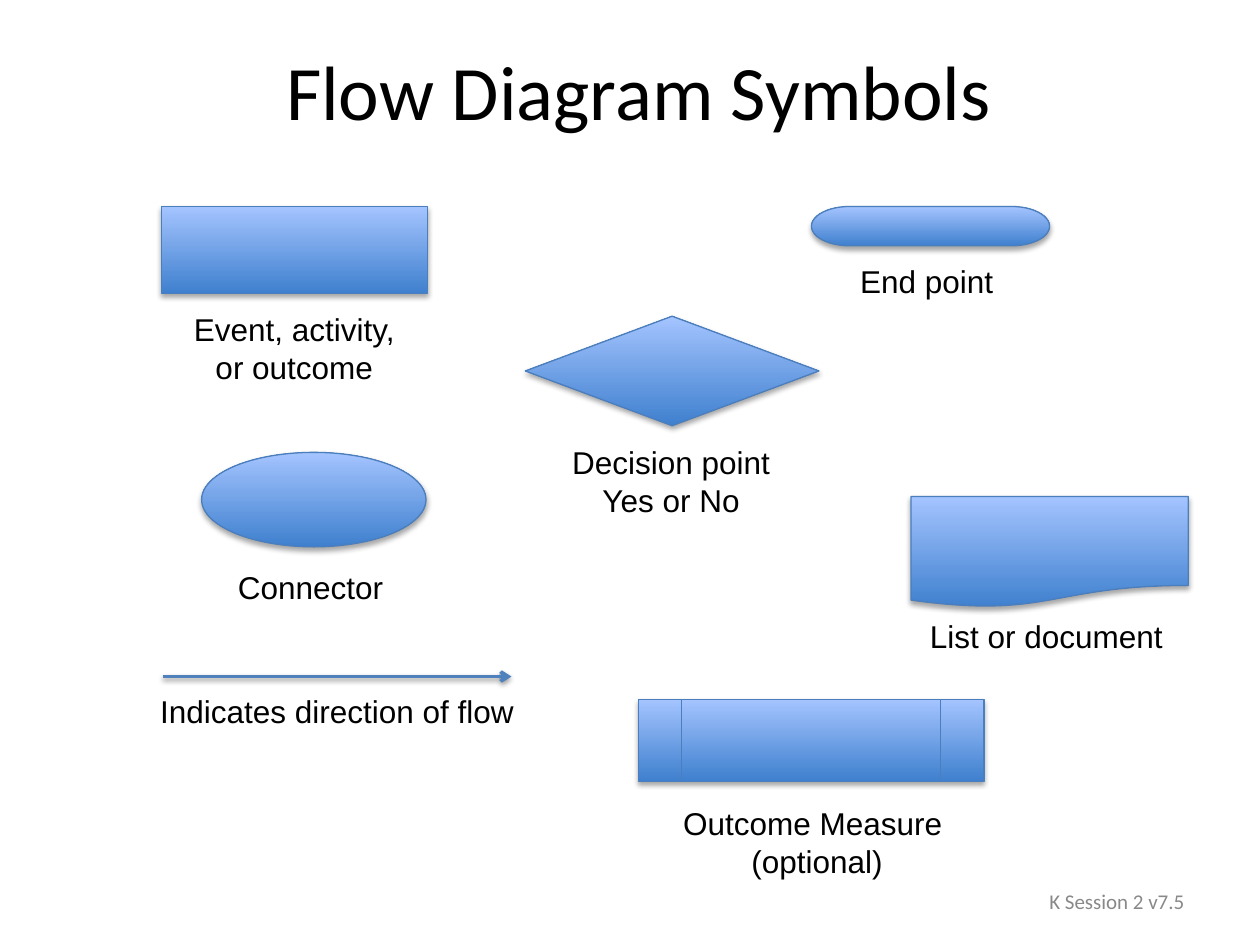
from lxml.etree import SubElement
from pptx import Presentation
from pptx.dml.color import RGBColor
from pptx.enum.shapes import MSO_CONNECTOR, MSO_SHAPE as Shape
from pptx.enum.text import MSO_ANCHOR as Anchor, MSO_AUTO_SIZE as AutoSize, PP_ALIGN as Align
from pptx.oxml.ns import qn
from pptx.util import Pt

COLORS = {
    "text": "000000",
    "footer": "898989",
    "fill_bottom": "3F80CE",
    "fill_top": "A4C4FF",
    "outline": "4B7EBC",
    "arrow": "4F81BD",
    "shadow": "000000",
}

SYMBOLS = [
    (Shape.RECTANGLE, (92.2, 118, 152, 49.7),
     "Event, activity,\nor outcome", (103, 173.5, 130.3)),
    (Shape.FLOWCHART_DECISION, (300.2, 180.7, 167.8, 62.6),
     "Decision point\nYes or No", (319, 249.8, 128.9)),
    (Shape.FLOWCHART_TERMINATOR, (463.7, 118, 136.1, 22.5),
     "End point", (483.8, 146.2, 91.4)),
    (Shape.FLOWCHART_CONNECTOR, (115.2, 258.5, 128.2, 54),
     "Connector", (128.2, 321.1, 98.6)),
    (Shape.FLOWCHART_DOCUMENT, (520.6, 283.7, 158.4, 63.4),
     "List or document", (523.4, 349.2, 149)),
    (Shape.FLOWCHART_PREDEFINED_PROCESS, (365, 399.6, 197.3, 46.8),
     "Outcome Measure \n(optional)", (382.3, 455.8, 169.2)),
]


def color(name):
    return RGBColor.from_string(COLORS[name])


def points(values):
    return [Pt(v) for v in values]


def write(tf, text, font, size, color_name, align):
    tf.text = text
    for p in tf.paragraphs:
        p.alignment = align
        for r in p.runs:
            r.font.name = font
            r.font.size = Pt(size)
            r.font.color.rgb = color(color_name)


def add_shadow(sp, opacity, distance):
    effects = SubElement(sp._element.spPr, qn("a:effectLst"))
    shadow = SubElement(effects, qn("a:outerShdw"), blurRad=str(Pt(3.1)),
                        dist=str(Pt(distance)), dir="5400000", rotWithShape="0")
    shade = SubElement(shadow, qn("a:srgbClr"), val=COLORS["shadow"])
    SubElement(shade, qn("a:alpha"), val=str(opacity * 1000))


def add_label(shapes, text, left, top, width):
    height = 7 + 22 * len(text.split("\n"))
    tf = shapes.add_textbox(*points((left, top, width, height))).text_frame
    tf.word_wrap = False
    tf.auto_size = AutoSize.SHAPE_TO_FIT_TEXT
    write(tf, text, "Arial", 18, "text", Align.CENTER)


def add_symbol(s, kind, box, text, label_box):
    shapes = s.shapes.add_group_shape().shapes
    sp = shapes.add_shape(kind, *points(box))
    sp.fill.gradient()
    sp.fill.gradient_angle = 90
    for stop, position, name in zip(sp.fill.gradient_stops, (0, 1), ("fill_bottom", "fill_top")):
        stop.position = position
        stop.color.rgb = color(name)
    sp.line.color.rgb = color("outline")
    sp.line.width = Pt(0.75)
    add_shadow(sp, 35, 1.8)
    add_label(shapes, text, *label_box)


def add_flow_arrow(s):
    shapes = s.shapes.add_group_shape().shapes
    arrow = shapes.add_connector(MSO_CONNECTOR.STRAIGHT, *points((92.9, 386.6, 292.3, 386.6)))
    arrow.line.color.rgb = color("arrow")
    arrow.line.width = Pt(2)
    SubElement(arrow.line._get_or_add_ln(), qn("a:tailEnd"), type="arrow")
    add_shadow(arrow, 38, 1.6)
    add_label(shapes, "Indicates direction of flow", 83.5, 391.7, 218.2)


def add_title(s, text):
    title = s.shapes.title
    title.left, title.top, title.width, title.height = points((41, 6, 648, 90))
    title.text_frame.vertical_anchor = Anchor.MIDDLE
    write(title.text_frame, text, "Calibri", 44, "text", Align.CENTER)


def add_footer(s, text):
    tf = s.shapes.add_textbox(*points((455.8, 500.4, 228.2, 28.8))).text_frame
    tf.word_wrap = True
    tf.vertical_anchor = Anchor.MIDDLE
    write(tf, text, "Calibri", 12, "footer", Align.RIGHT)


def main():
    prs = Presentation()
    prs.slide_width, prs.slide_height = Pt(720), Pt(540)
    s = prs.slides.add_slide(prs.slide_layouts[5])
    add_title(s, "Flow Diagram Symbols")
    for symbol in SYMBOLS:
        add_symbol(s, *symbol)
    add_flow_arrow(s)
    add_footer(s, "K Session 2 v7.5")
    prs.save("out.pptx")


if __name__ == "__main__":
    main()
